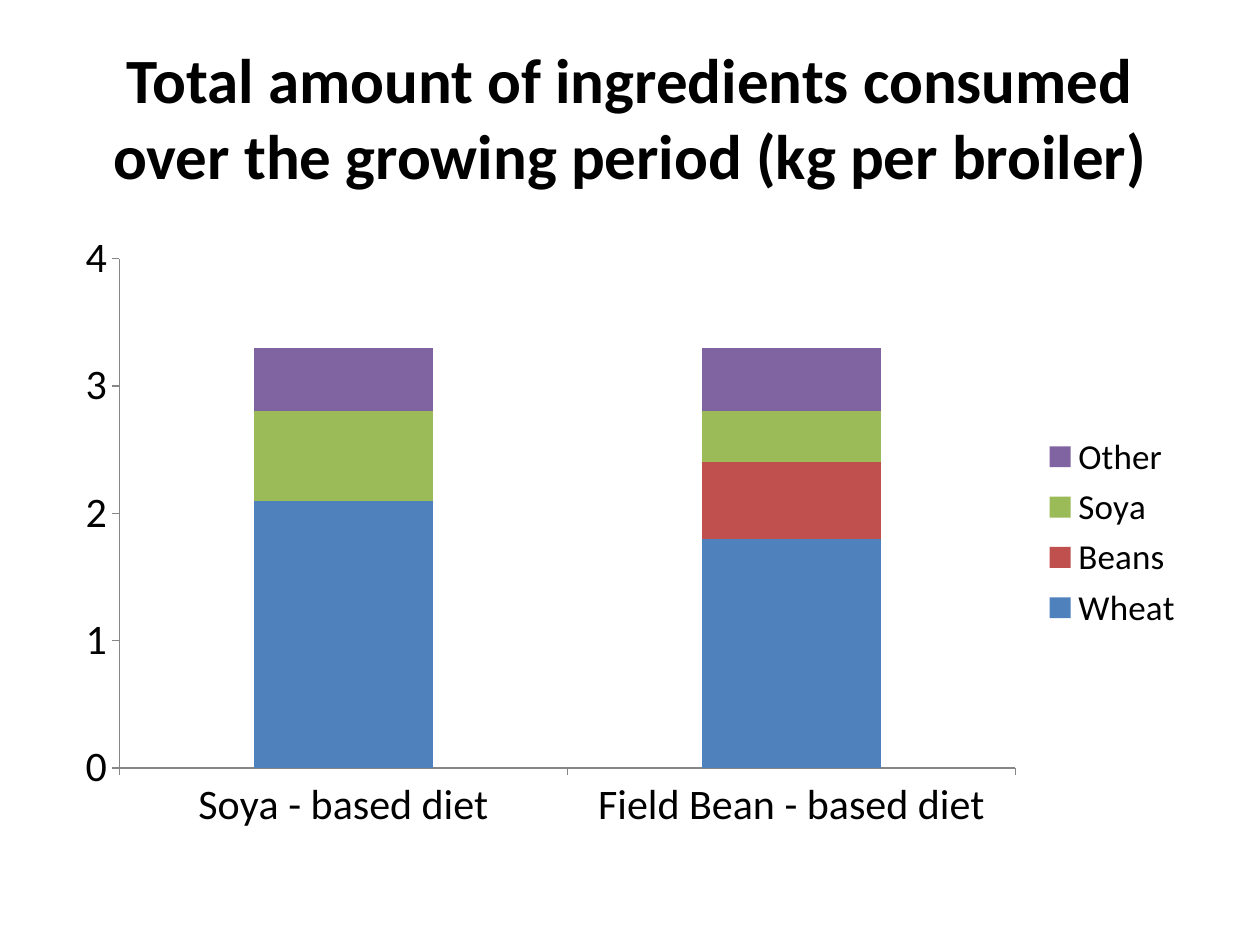
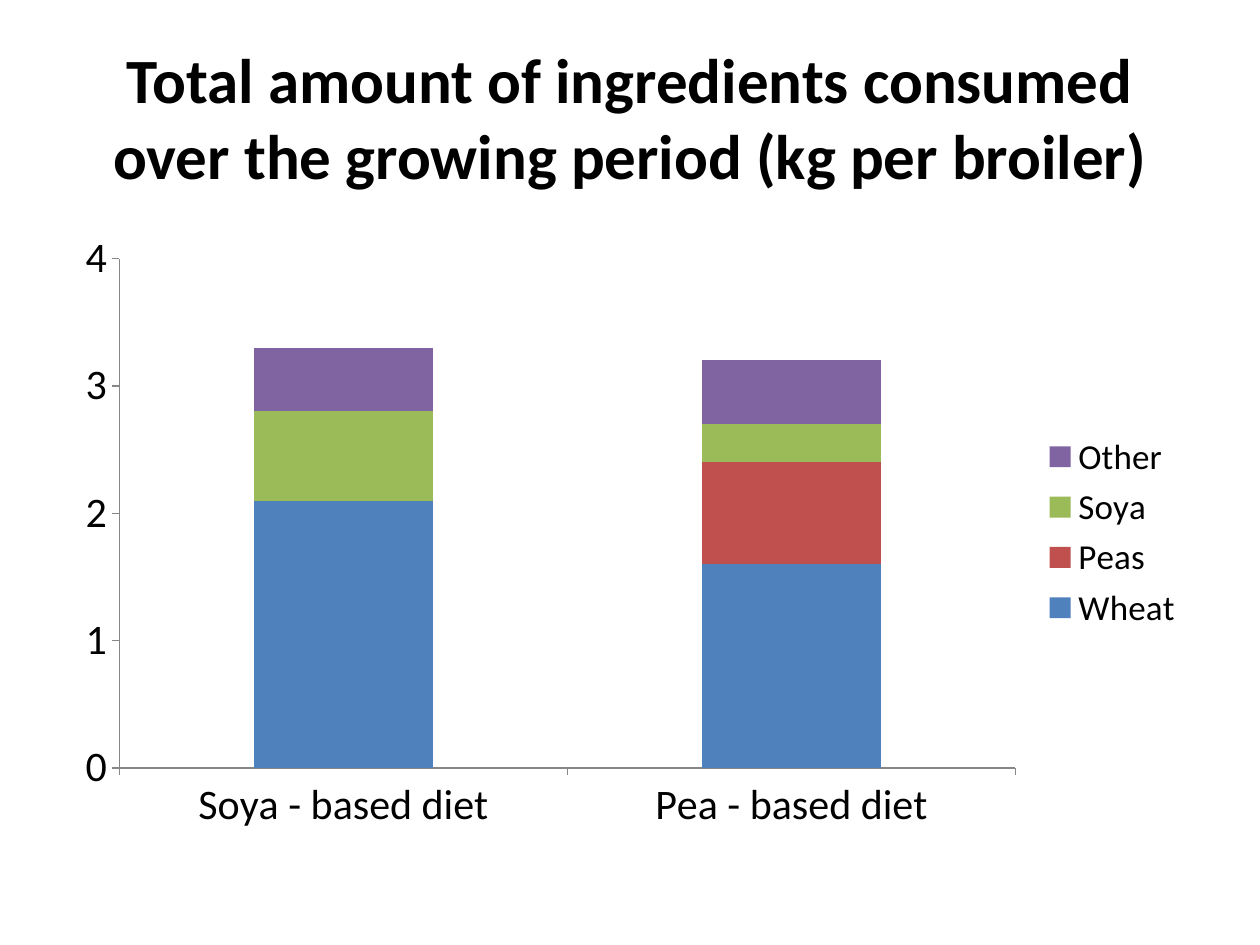
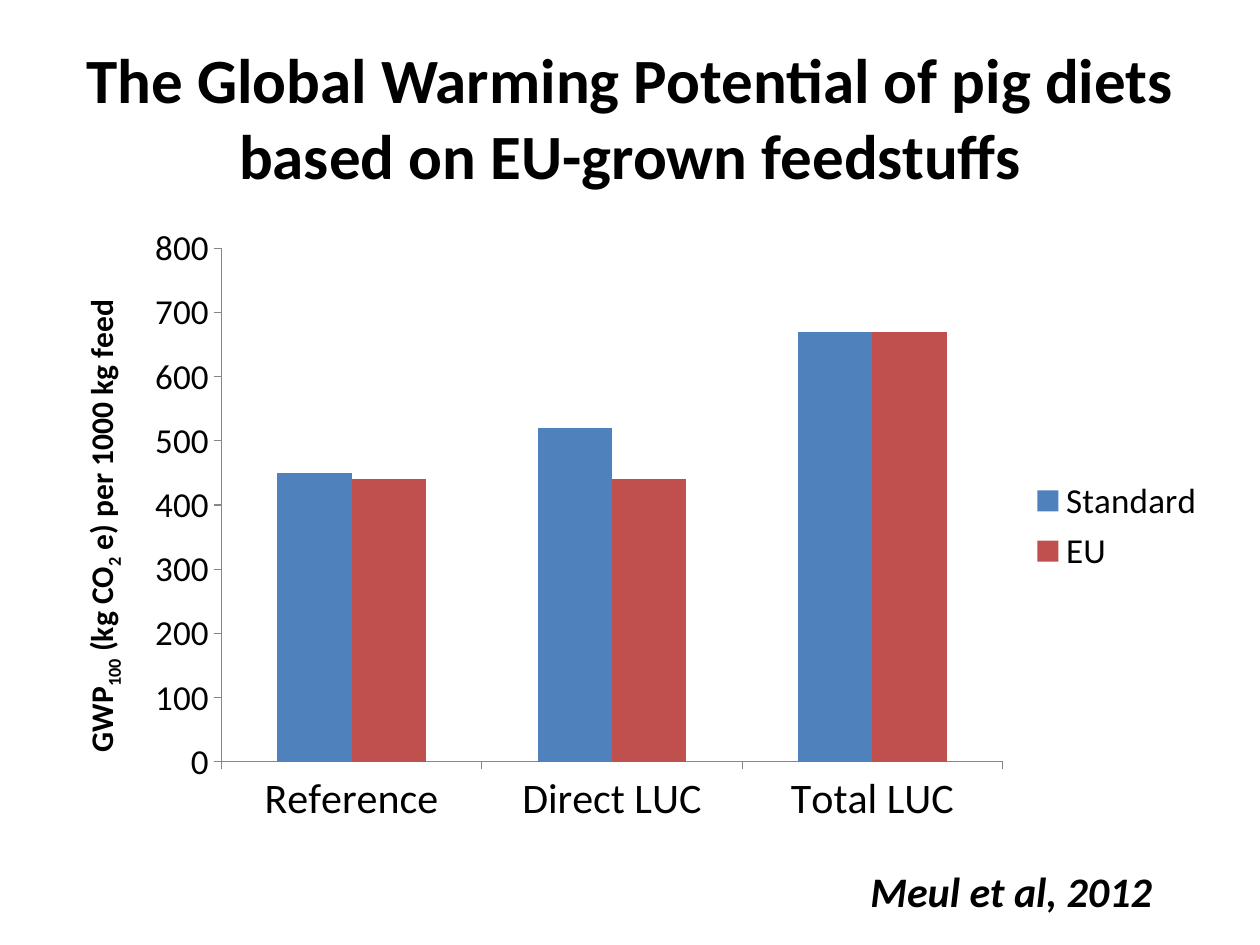
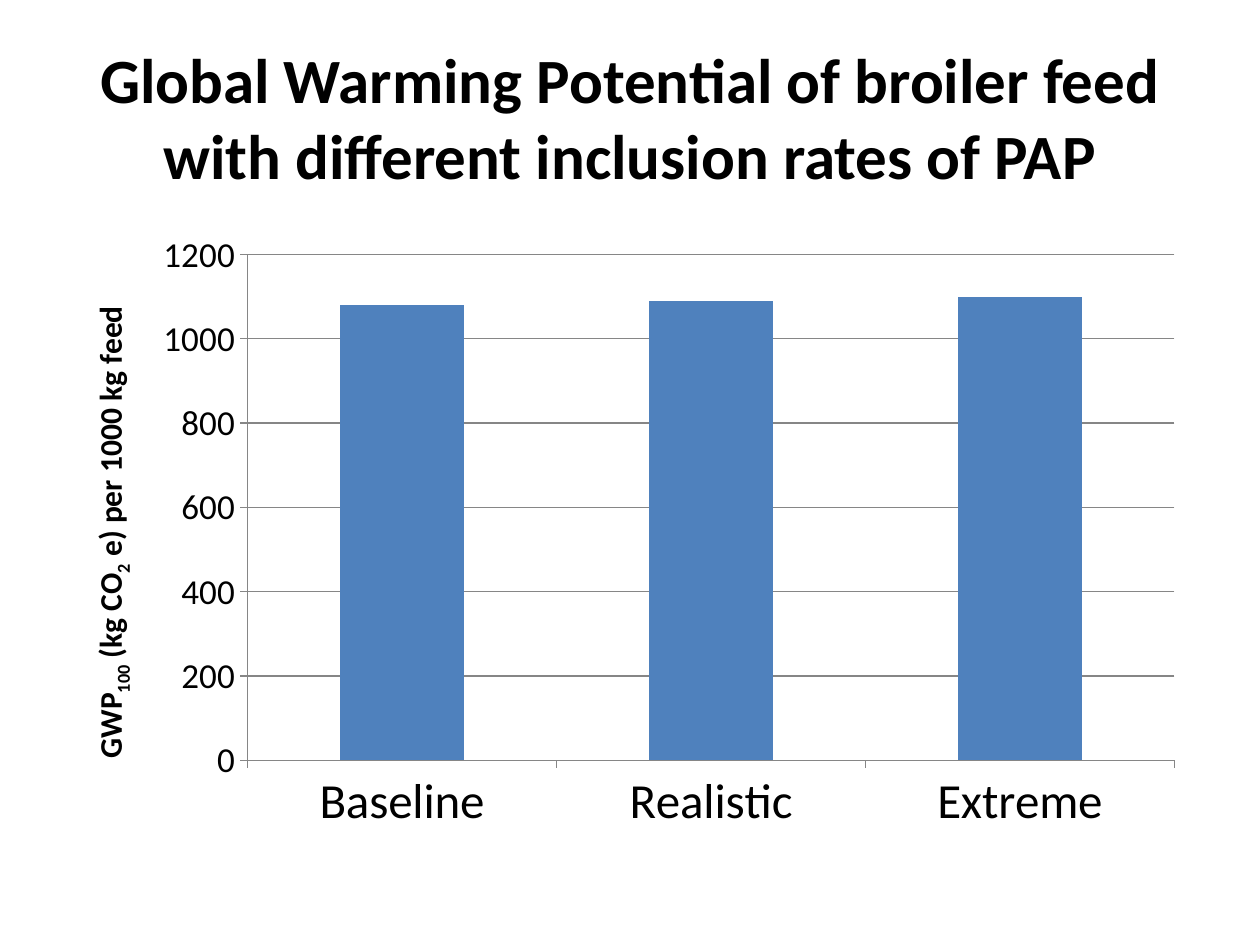
from pptx import Presentation
from pptx import util as u
from pptx.chart import data as cd
from pptx.dml import color as col
from pptx.enum import chart as ch, text as t

# Shared style
FONT = "Calibri"
BLACK = "000000"
AXIS_GREY = "868686"
SERIES_COLOURS = ["4F81BD", "C0504D", "9BBB59", "8064A2"]
CHART_BOX = (0.5, 1.75, 9, 4.95)
CONSUMED = "Total amount of ingredients consumed over the growing period (kg per broiler)"
# Axis title as (text, is subscript)
GWP_TITLE = [("GWP", False), ("100", True), (" (kg CO", False), ("2", True),
             (" e) per 1000 kg feed", False)]


def rgb(hex_colour):
    return col.RGBColor.from_string(hex_colour)


def set_font(font, size, bold=False, italic=False):
    font.name = FONT
    font.size = u.Pt(size)
    font.bold = bold
    font.italic = italic
    font.color.rgb = rgb(BLACK)


def add_text(s, box, words, size, align=t.PP_ALIGN.LEFT, anchor=t.MSO_ANCHOR.TOP,
             italic=False):
    tf = s.shapes.add_textbox(*map(u.Inches, box)).text_frame
    tf.word_wrap = True
    tf.vertical_anchor = anchor
    p = tf.paragraphs[0]
    p.alignment = align
    r = p.add_run()
    r.text = words
    set_font(r.font, size, bold=True, italic=italic)


def add_slide(prs, title):
    s = prs.slides.add_slide(prs.slide_layouts[6])
    add_text(s, (0.5, 0.3, 9, 1.25), title, 36, t.PP_ALIGN.CENTER, t.MSO_ANCHOR.MIDDLE)
    return s


def style_line(line):
    line.color.rgb = rgb(AXIS_GREY)
    line.width = u.Pt(0.75)


def style_axis(axis, size):
    set_font(axis.tick_labels.font, size)
    axis.major_tick_mark = ch.XL_TICK_MARK.OUTSIDE
    axis.minor_tick_mark = ch.XL_TICK_MARK.NONE
    style_line(axis.format.line)


def add_axis_title(axis, parts):
    p = axis.axis_title.text_frame.paragraphs[0]
    for words, subscript in parts:
        r = p.add_run()
        r.text = words
        set_font(r.font, 18, bold=True)
        if subscript:
            r._r.get_or_add_rPr().set("baseline", "-25000")


def add_columns(s, categories, series, top, step, box=CHART_BOX, stacked=False,
                cat_size=24, val_size=20, axis_title=None, legend=True, grid=False):
    chart_data = cd.CategoryChartData(number_format="General")
    chart_data.categories = categories
    for name, values in series.items():
        chart_data.add_series(name, values)
    kind = ch.XL_CHART_TYPE.COLUMN_STACKED if stacked else ch.XL_CHART_TYPE.COLUMN_CLUSTERED
    chart = s.shapes.add_chart(kind, *map(u.Inches, box), chart_data).chart
    set_font(chart.font, 10)
    chart.has_title = False

    # Columns
    plot = chart.plots[0]
    plot.gap_width = 150
    plot.overlap = 100 if stacked else 0
    plot.vary_by_categories = False
    for bars, colour in zip(plot.series, SERIES_COLOURS):
        bars.format.fill.solid()
        bars.format.fill.fore_color.rgb = rgb(colour)

    # Axes
    style_axis(chart.category_axis, cat_size)
    axis = chart.value_axis
    style_axis(axis, val_size)
    axis.minimum_scale = 0
    axis.maximum_scale = top
    axis.major_unit = step
    axis.has_major_gridlines = grid
    if grid:
        style_line(axis.major_gridlines.format.line)
    if axis_title:
        add_axis_title(axis, axis_title)

    # Legend
    chart.has_legend = legend
    if legend:
        chart.legend.position = ch.XL_LEGEND_POSITION.RIGHT
        chart.legend.include_in_layout = False
        set_font(chart.legend.font, 20)


def add_diet_slide(prs, diet, legume, wheat, legume_kg, soya):
    s = add_slide(prs, CONSUMED)
    add_columns(s, ["Soya - based diet", f"{diet} - based diet"],
                {"Wheat": (2.1, wheat), legume: (0, legume_kg),
                 "Soya": (0.7, soya), "Other": (0.5, 0.5)},
                top=4, step=1, stacked=True, val_size=24)


def main():
    prs = Presentation()
    prs.slide_width, prs.slide_height = u.Inches(10), u.Inches(7.5)

    # Broiler diets
    add_diet_slide(prs, "Field Bean", "Beans", 1.8, 0.6, 0.4)
    add_diet_slide(prs, "Pea", "Peas", 1.6, 0.8, 0.3)

    # Pig diets
    s = add_slide(prs, "The Global Warming Potential of pig diets based on EU-grown feedstuffs")
    add_columns(s, ["Reference", "Direct LUC", "Total LUC"],
                {"Standard": (450, 520, 670), "EU": (440, 440, 670)},
                top=800, step=100, box=(0.43, 1.7, 9.24, 4.95), axis_title=GWP_TITLE)
    add_text(s, (6.81, 6.82, 2.76, 0.5), "Meul et al, 2012", 24, italic=True)

    # Processed animal protein in broiler feed
    s = add_slide(prs, "Global Warming Potential of broiler feed with different "
                       "inclusion rates of PAP")
    add_columns(s, ["Baseline", "Realistic", "Extreme"], {"Series 1": (1080, 1090, 1100)},
                top=1200, step=200, cat_size=28, axis_title=GWP_TITLE,
                legend=False, grid=True)

    prs.save("out.pptx")


if __name__ == "__main__":
    main()
